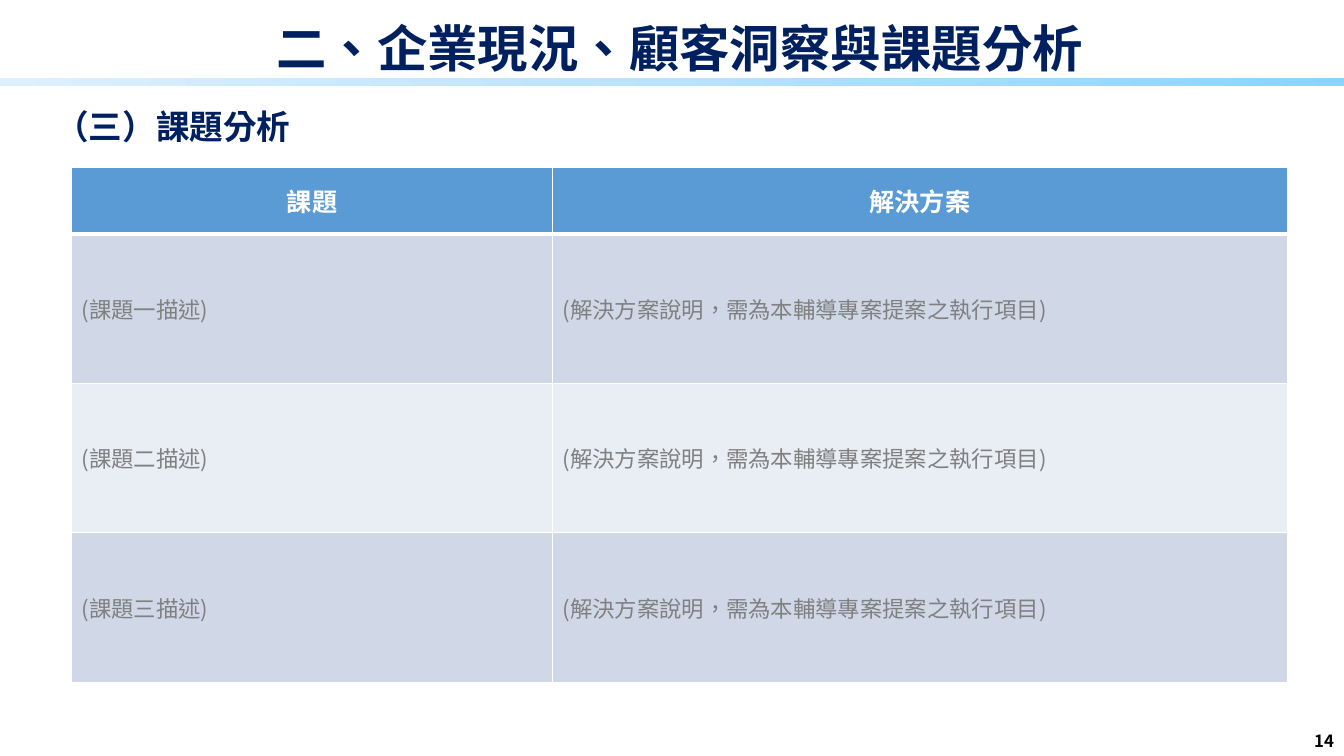
from copy import deepcopy

from lxml import etree
from pptx import Presentation
from pptx.dml.color import RGBColor
from pptx.enum.shapes import MSO_SHAPE as Preset
from pptx.enum.text import MSO_ANCHOR as Anchor, PP_ALIGN as Align
from pptx.oxml.ns import qn
from pptx.util import Inches, Pt

FONT = "Noto Sans CJK SC"
NAVY = RGBColor(0x00, 0x20, 0x60)
BLACK = RGBColor(0x00, 0x00, 0x00)
WHITE = RGBColor(0xFF, 0xFF, 0xFF)
GREY = RGBColor(0x80, 0x80, 0x80)
HEADER_BLUE = RGBColor(0x5B, 0x9B, 0xD5)
ROW_FILLS = (RGBColor(0xD0, 0xD8, 0xE8), RGBColor(0xE9, 0xED, 0xF4))
BAR_COLORS = (RGBColor(0x8C, 0xD3, 0xFF), RGBColor(0xB9, 0xE2, 0xFE),
              RGBColor(0xDD, 0xF0, 0xFE))

# Grid of square cells: 133.3 columns by 75 rows
CELL = Inches(0.1)
COLUMNS, ROWS = 133.3, 75

SOLUTION = "(解決方案說明，需為本輔導專案提案之執行項目)"
TABLE_ROWS = [("課題", "解決方案")] + [
    (f"(課題{number}描述)", SOLUTION) for number in "一二三"]


def grid(*cells):
    return [round(count * CELL) for count in cells]


def write(frame, text, size, color, bold=True, align=Align.LEFT, spacing=None):
    paragraph = frame.paragraphs[0]
    paragraph.alignment = align
    paragraph.line_spacing = spacing
    run = paragraph.add_run()
    run.text = text
    font = run.font
    font.name, font.size, font.bold = FONT, Pt(size), bold
    font.color.rgb = color
    # East Asian typeface and language
    properties = run._r.get_or_add_rPr()
    properties.set("lang", "zh-TW")
    east_asian = etree.Element(qn("a:ea"), typeface=FONT)
    properties.find(qn("a:latin")).addnext(east_asian)


def add_text(slide, box, text, size, color, anchor=Anchor.MIDDLE, wrap=True, **style):
    frame = slide.shapes.add_textbox(*grid(*box)).text_frame
    frame.word_wrap = wrap
    frame.vertical_anchor = anchor
    write(frame, text, size, color, **style)


def add_gradient_bar(slide, box):
    bar = slide.shapes.add_shape(Preset.RECTANGLE, *grid(*box))
    bar.shadow.inherit = False
    bar.line.fill.background()
    bar.fill.gradient()
    bar.fill.gradient_angle = 180
    # Third stop, in the middle of the two default ones
    stops = bar._element.spPr.find(qn("a:gradFill")).find(qn("a:gsLst"))
    stops.insert(1, deepcopy(stops[0]))
    for index, (stop, color) in enumerate(zip(bar.fill.gradient_stops, BAR_COLORS)):
        stop.position = index / 2
        stop.color.rgb = color


def add_heading(slide, box):
    left, top, width, height = box
    add_gradient_bar(slide, (left - 0.1, top + 7.7, width + 0.3, 0.8))
    add_text(slide, (left + 9.9, top + 1.8, 115, 6.5), "二、企業現況、顧客洞察與課題分析",
             36, NAVY, align=Align.CENTER, spacing=0.9)
    add_text(slide, (left + 4.5, top + height - 5, 25.6, 5), "（三）課題分析",
             24, NAVY, anchor=Anchor.TOP, wrap=False)


def set_borders(cell, **widths):
    properties = cell._tc.get_or_add_tcPr()
    for index, (side, points) in enumerate(widths.items()):
        line = etree.Element(qn(f"a:{side}"), w=str(Pt(points)))
        fill = etree.SubElement(line, qn("a:solidFill"))
        etree.SubElement(fill, qn("a:srgbClr"), val=str(WHITE))
        properties.insert(index, line)


def add_issue_table(slide, box):
    left, top, width, height = box
    column_widths = (47.7, width - 47.7)
    header_height = 6.6
    body_height = (height - header_height) / (len(TABLE_ROWS) - 1)
    table = slide.shapes.add_table(len(TABLE_ROWS), 2, *grid(*box)).table
    for column, column_width in zip(table.columns, grid(*column_widths)):
        column.width = column_width
    for row_index, texts in enumerate(TABLE_ROWS):
        header = row_index == 0
        table.rows[row_index].height = grid(header_height if header else body_height)[0]
        for column_index, text in enumerate(texts):
            cell = table.cell(row_index, column_index)
            cell.vertical_anchor = Anchor.MIDDLE
            cell.fill.solid()
            cell.fill.fore_color.rgb = HEADER_BLUE if header else ROW_FILLS[(row_index - 1) % 2]
            set_borders(cell, lnL=1, lnR=1, lnT=3 if row_index == 1 else 1,
                        lnB=3 if header else 1)
            if header:
                write(cell.text_frame, text, 18, WHITE, align=Align.CENTER)
            else:
                write(cell.text_frame, text, 16, GREY, bold=False,
                      align=Align.JUSTIFY if column_index else Align.LEFT)


def add_page_number(slide, box):
    add_text(slide, box, "14", 12, BLACK, align=Align.RIGHT)


def main():
    presentation = Presentation()
    presentation.slide_width, presentation.slide_height = grid(COLUMNS, ROWS)
    slide = presentation.slides.add_slide(presentation.slide_layouts[6])
    add_page_number(slide, (COLUMNS - 7.6, ROWS - 4, 7.6, 5))
    add_heading(slide, (0, 0, COLUMNS, 15))
    add_issue_table(slide, (7.1, 16.6, 120.6, 51.1))
    presentation.save("out.pptx")


if __name__ == "__main__":
    main()
